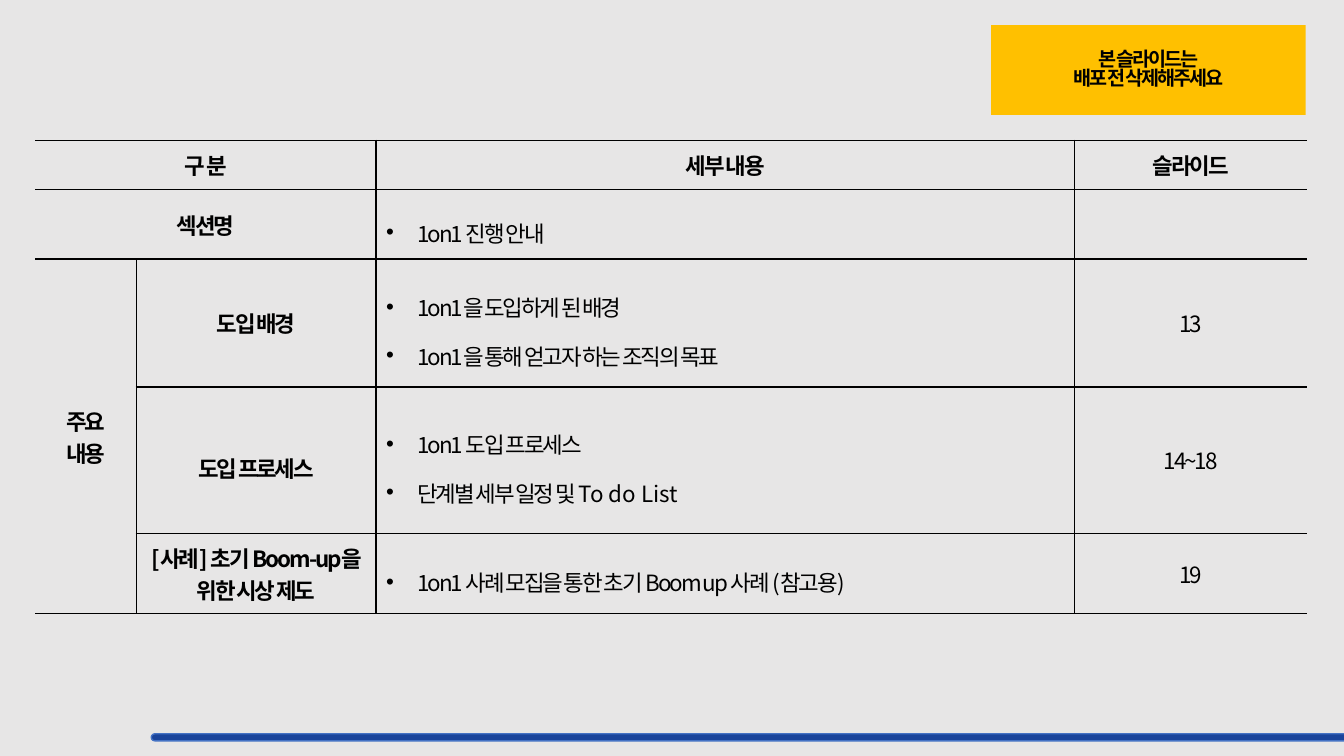
from lxml.etree import SubElement
from pptx import Presentation
from pptx.dml.color import RGBColor
from pptx.enum.shapes import MSO_SHAPE as Preset
from pptx.enum.text import MSO_ANCHOR as Anchor, PP_ALIGN as Align
from pptx.oxml.ns import qn
from pptx.util import Inches, Pt

FONT = "Noto Sans CJK KR"
COLORS = {
    "background": "E7E6E6",
    "ink": "000000",
    "notice": "FFC000",
    "bar": "1A449B",
    "bar_line": "4472C4",
}
TIGHT = -150
NOTICE = ["본 슬라이드는", "배포 전 삭제해주세요"]
HEADERS = {0: "구 분", 2: "세부 내용", 3: "슬라이드"}
SECTION = ("섹션명", [["1on1 진행 안내"]])
GROUP = ["주요", "내용"]
TOPICS = [
    ("도입 배경", 1.0, [["1on1을 도입하게 된 배경"], ["1on1을 통해 얻고자 하는 조직의 목표"]], "13"),
    ("도입 프로세스", 1.5, [["1on1 도입 프로세스"], ["단계별 세부 일정 및 ", ("To do List", 0)]], "14~18"),
    ("[사례] 초기 Boom-up을 위한 시상 제도", 1.0, [["1on1 사례 모집을 통한 초기 Boom up 사례 (참고용)"]], "19"),
]
COLUMN_WIDTHS = [1, 2.38, 6.93, 2.3]
ROW_HEIGHTS = [0.49, 0.69, 1.27, 1.45, 0.8]
MERGES = [((0, 0), (0, 1)), ((1, 0), (1, 1)), ((2, 0), (4, 0))]


def color(name):
    return RGBColor.from_string(COLORS[name])


def add_run(paragraph, text, size, bold, spacing=TIGHT):
    run = paragraph.add_run()
    run.text = text
    run.font.size = Pt(size)
    run.font.bold = bold
    run.font.name = FONT
    run.font.color.rgb = color("ink")
    properties = run.font._element
    properties.set("spc", str(spacing))
    SubElement(properties, qn("a:ea")).set("typeface", FONT)


def paragraphs_for(text_frame, lines):
    for index, line in enumerate(lines):
        yield (text_frame.add_paragraph() if index else text_frame.paragraphs[0]), line


def write_centered(text_frame, lines, size=16, bold=True, line_spacing=1.0):
    for paragraph, line in paragraphs_for(text_frame, lines):
        paragraph.alignment = Align.CENTER
        paragraph.line_spacing = line_spacing
        add_run(paragraph, line, size, bold)


def write_bullets(text_frame, items):
    for paragraph, parts in paragraphs_for(text_frame, items):
        paragraph.line_spacing = 1.5
        properties = paragraph._p.get_or_add_pPr()
        properties.set("marL", str(Inches(0.31)))
        properties.set("indent", str(-Inches(0.31)))
        SubElement(properties, qn("a:buFont")).set("typeface", "Arial")
        SubElement(properties, qn("a:buChar")).set("char", "•")
        for part in parts:
            text, spacing = (part, TIGHT) if isinstance(part, str) else part
            add_run(paragraph, text, 16, False, spacing)


def add_block(slide, preset, box, fill):
    shape = slide.shapes.add_shape(preset, *map(Inches, box))
    shape.shadow.inherit = False
    shape.fill.solid()
    shape.fill.fore_color.rgb = color(fill)
    return shape


def set_borders(cell, column):
    width = cell.span_width if cell.is_merge_origin else 1
    visible = {
        "lnL": column > 0,
        "lnR": column + width < len(COLUMN_WIDTHS),
        "lnT": True,
        "lnB": True,
    }
    properties = cell._tc.get_or_add_tcPr()
    for tag, shown in visible.items():
        line = SubElement(properties, qn(f"a:{tag}"))
        line.set("w", str(Pt(1)))
        if shown:
            fill = SubElement(line, qn("a:solidFill"))
            SubElement(fill, qn("a:srgbClr")).set("val", COLORS["ink"])
        else:
            SubElement(line, qn("a:noFill"))


def add_contents_table(slide):
    frame = slide.shapes.add_table(
        len(ROW_HEIGHTS), len(COLUMN_WIDTHS), Inches(0.35), Inches(1.39),
        Inches(sum(COLUMN_WIDTHS)), Inches(sum(ROW_HEIGHTS)),
    )
    table = frame.table
    table.first_row = table.horz_banding = False
    for column, width in zip(table.columns, COLUMN_WIDTHS):
        column.width = Inches(width)
    for row, height in zip(table.rows, ROW_HEIGHTS):
        row.height = Inches(height)
    for first, last in MERGES:
        table.cell(*first).merge(table.cell(*last))
    for row in table.rows:
        for column, cell in enumerate(row.cells):
            set_borders(cell, column)
            cell.fill.background()
            cell.vertical_anchor = Anchor.MIDDLE

    for column, header in HEADERS.items():
        write_centered(table.cell(0, column).text_frame, [header])
    section, section_items = SECTION
    write_centered(table.cell(1, 0).text_frame, [section])
    write_bullets(table.cell(1, 2).text_frame, section_items)
    write_centered(table.cell(2, 0).text_frame, GROUP)
    for row, (topic, line_spacing, items, pages) in enumerate(TOPICS, start=2):
        write_centered(table.cell(row, 1).text_frame, [topic], line_spacing=line_spacing)
        write_bullets(table.cell(row, 2).text_frame, items)
        write_centered(table.cell(row, 3).text_frame, [pages], bold=False)


def main():
    presentation = Presentation()
    presentation.slide_width = Inches(13.33)
    presentation.slide_height = Inches(7.5)
    slide = presentation.slides.add_slide(presentation.slide_layouts[6])
    slide.background.fill.solid()
    slide.background.fill.fore_color.rgb = color("background")

    bar = add_block(slide, Preset.ROUNDED_RECTANGLE, (1.5, 7.28, 11.99, 0.07), "bar")
    bar.adjustments[0] = 0.5
    bar.line.color.rgb = color("bar_line")
    bar.line.width = Pt(1)

    notice = add_block(slide, Preset.RECTANGLE, (9.83, 0.25, 3.12, 0.89), "notice")
    notice.line.fill.background()
    notice.text_frame.word_wrap = True
    notice.text_frame.vertical_anchor = Anchor.MIDDLE
    write_centered(notice.text_frame, NOTICE, size=14, line_spacing=0.8)

    add_contents_table(slide)
    presentation.save("out.pptx")


if __name__ == "__main__":
    main()
